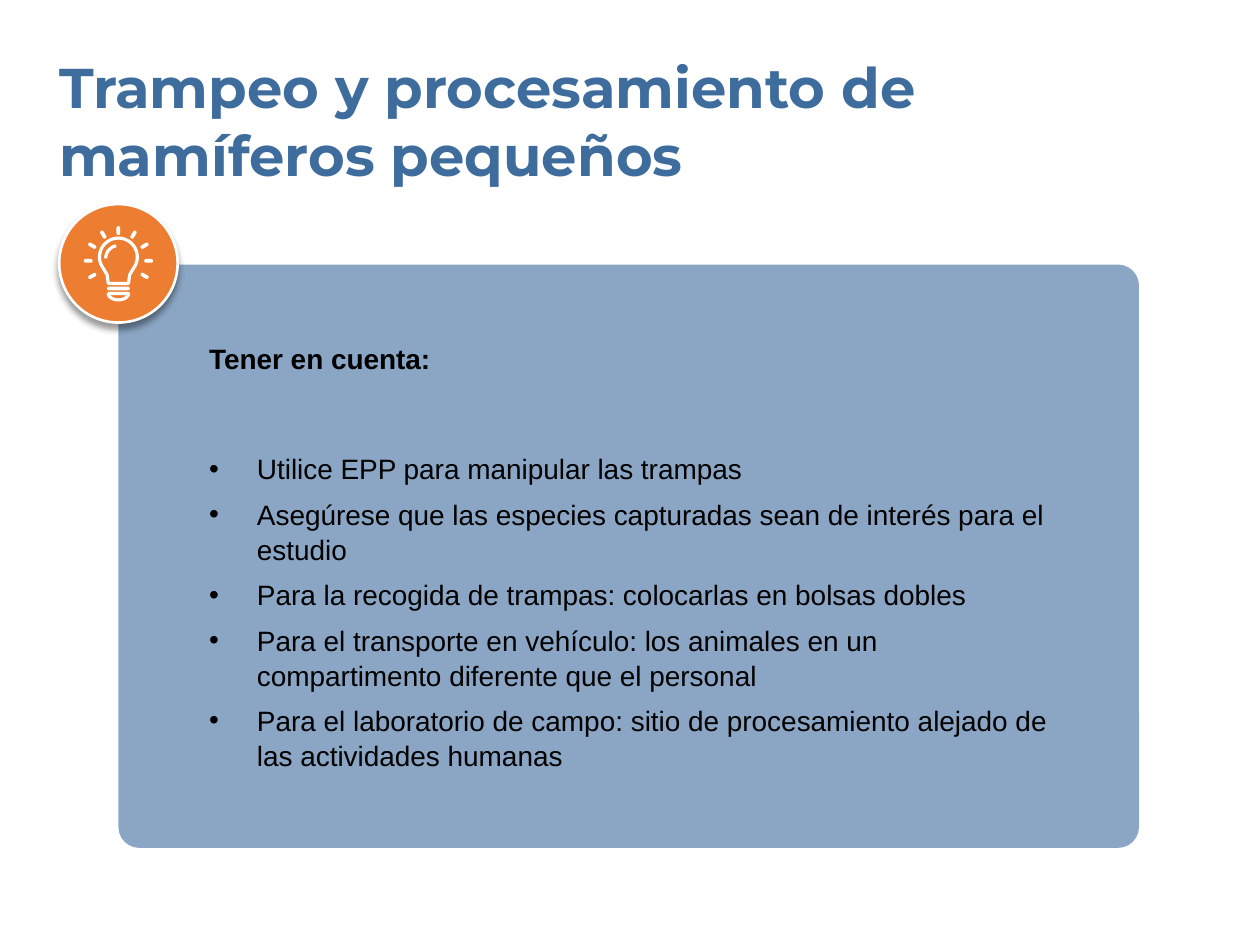
from math import cos, radians, sin

from lxml.etree import SubElement
from pptx import Presentation
from pptx.dml.color import RGBColor
from pptx.enum.shapes import MSO_SHAPE
from pptx.enum.text import MSO_ANCHOR
from pptx.oxml import parse_xml
from pptx.oxml.ns import nsdecls, qn
from pptx.util import Inches, Pt

COLORS = {"blue": "3D6C9D", "orange": "ED7D31", "white": "FFFFFF", "black": "000000"}
TITLE = {"name": "Montserrat", "size": Pt(32), "bold": True}
HEAD = {"name": "Arial", "size": Pt(16), "bold": True}
BODY = {"name": "Arial", "size": Pt(16), "bold": False}
TIPS = [
    "Utilice EPP para manipular las trampas",
    "Asegúrese que las especies capturadas sean de interés para el estudio",
    "Para la recogida de trampas: colocarlas en bolsas dobles",
    "Para el transporte en vehículo: los animales en un compartimento diferente que el personal",
    "Para el laboratorio de campo: sitio de procesamiento alejado de las actividades humanas",
]


def tint(key):
    return RGBColor.from_string(COLORS[key])


def add_frame(slide, box, anchor):
    frame = slide.shapes.add_textbox(*map(Inches, box)).text_frame
    style = {"word_wrap": True, "vertical_anchor": anchor, "margin_left": 0,
             "margin_right": 0, "margin_top": 0, "margin_bottom": 0}
    for name, value in style.items():
        setattr(frame, name, value)
    return frame


def add_line(para, text, style, color):
    run = para.add_run()
    run.text = text
    for name, value in style.items():
        setattr(run.font, name, value)
    run.font.color.rgb = tint(color)


def add_bullet(para):
    props = para._p.get_or_add_pPr()
    props.set("marL", str(Inches(0.38)))
    props.set("indent", str(-Inches(0.38)))
    SubElement(props, qn("a:buFont")).set("typeface", "Arial")
    SubElement(props, qn("a:buChar")).set("char", "•")


def add_shape(shapes, kind, box, color):
    shape = shapes.add_shape(kind, *map(Inches, box))
    shape.shadow.inherit = False
    shape.fill.solid()
    shape.fill.fore_color.rgb = tint(color)
    shape.line.fill.background()
    return shape


def add_panel(slide):
    panel = add_shape(slide.shapes, MSO_SHAPE.ROUNDED_RECTANGLE, (0.94, 2.1, 8.1, 4.63), "blue")
    panel.adjustments[0] = 0.036
    fill = panel._element.spPr.find(qn("a:solidFill"))
    SubElement(fill[0], qn("a:alpha")).set("val", "60000")


def add_badge(slide):
    badge = add_shape(slide.shapes, MSO_SHAPE.OVAL, (0.47, 1.62, 0.94, 0.94), "orange")
    badge.line.color.rgb = tint("white")
    badge.line.width = Pt(1.5)
    glow = parse_xml(
        f'<a:outerShdw {nsdecls("a")} blurRad="{Pt(4)}" dist="{Pt(3)}" dir="5400000">'
        f'<a:srgbClr val="{COLORS["black"]}"><a:alpha val="40000"/></a:srgbClr></a:outerShdw>')
    badge._element.spPr.find(qn("a:effectLst")).append(glow)


def arc(mid, size, start, end, count=32):
    """Return points on an ellipse, with angles counted clockwise from the right."""
    turns = [radians(start + (end - start) * i / count) for i in range(count + 1)]
    return [(mid[0] + size[0] * cos(t), mid[1] + size[1] * sin(t)) for t in turns]


def add_stroke(shapes, points, close):
    spots = [(Inches(x), Inches(y)) for x, y in points]
    pen = shapes.build_freeform(*spots[0])
    pen.add_line_segments(spots[1:], close=close)
    shape = pen.convert_to_shape()
    shape.shadow.inherit = False
    shape.fill.background()
    shape.line.color.rgb = tint("white")
    shape.line.width = Pt(1.8)


def add_bar(shapes, mid, size, angle=0):
    box = (mid[0] - size[0] / 2, mid[1] - size[1] / 2, *size)
    bar = add_shape(shapes, MSO_SHAPE.ROUNDED_RECTANGLE, box, "white")
    bar.adjustments[0] = 0.5
    bar.rotation = angle


def add_bulb(slide):
    shapes = slide.shapes.add_group_shape().shapes
    glass = arc((0.94, 2.04), (0.15, 0.15), 142, 398)
    neck = [(1.03, 2.18), (1.02, 2.25), (0.86, 2.25), (0.85, 2.18)]
    add_stroke(shapes, glass + neck, True)
    add_stroke(shapes, arc((0.94, 2.05), (0.1, 0.1), 180, 260), False)
    add_stroke(shapes, arc((0.94, 2.33), (0.08, 0.05), 0, 180), True)
    add_bar(shapes, (0.94, 2.29), (0.18, 0.03))
    for angle in range(150, 391, 30):
        turn = radians(angle)
        mid = (0.94 + 0.24 * cos(turn), 2.07 + 0.24 * sin(turn))
        add_bar(shapes, mid, (0.07, 0.03), angle % 360)


def add_tips(slide):
    frame = add_frame(slide, (1.66, 2.1, 6.66, 4.63), MSO_ANCHOR.MIDDLE)
    add_line(frame.paragraphs[0], "Tener en cuenta:", HEAD, "black")
    for i, tip in enumerate(TIPS):
        para = frame.add_paragraph()
        para.space_before = Pt(6 if i else 43)
        add_line(para, tip, BODY, "black")
    for para in frame.paragraphs:
        para.line_spacing = 1.04
    for para in frame.paragraphs[1:]:
        add_bullet(para)


def main():
    deck = Presentation()
    deck.slide_width, deck.slide_height = Inches(10), Inches(7.5)
    slide = deck.slides.add_slide(deck.slide_layouts[6])
    title = add_frame(slide, (0.47, 0.42, 6.88, 1.08), MSO_ANCHOR.TOP)
    add_line(title.paragraphs[0], "Trampeo y procesamiento de mamíferos pequeños", TITLE, "blue")
    add_panel(slide)
    add_badge(slide)
    add_tips(slide)
    add_bulb(slide)
    deck.save("out.pptx")


if __name__ == "__main__":
    main()
